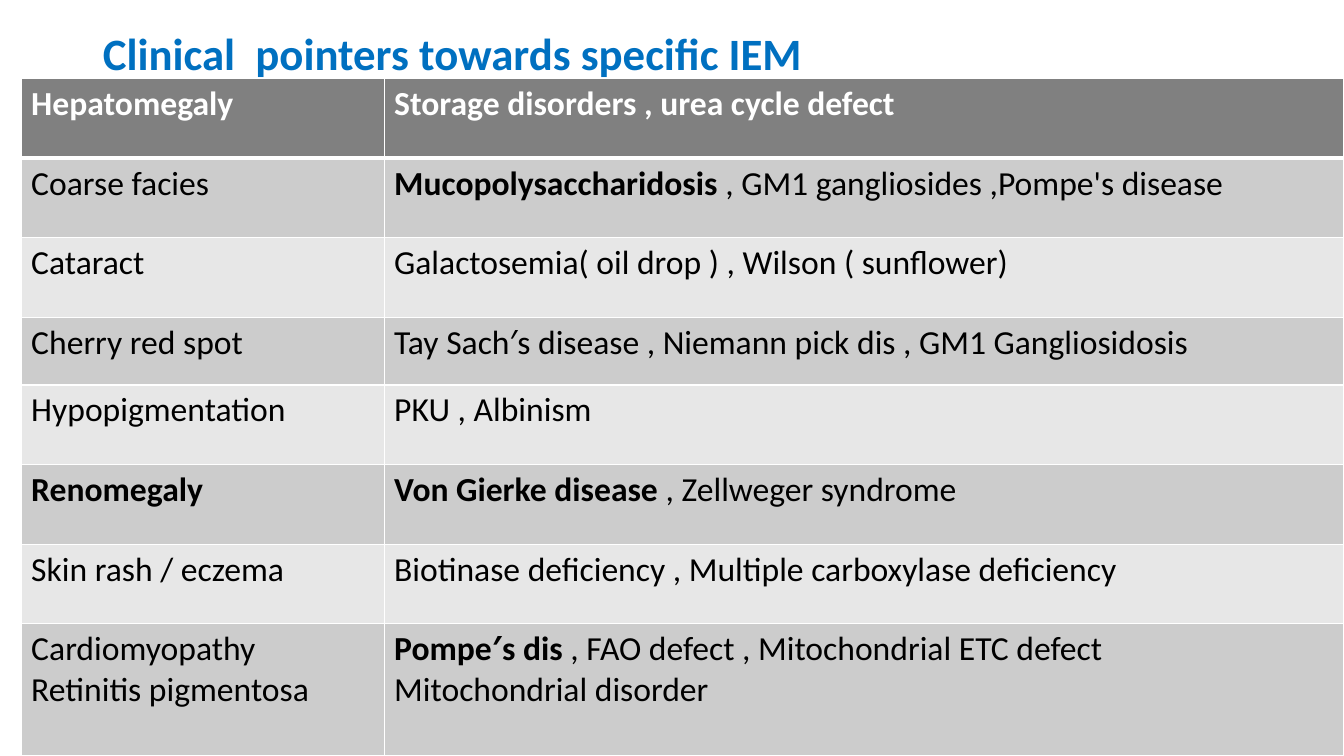
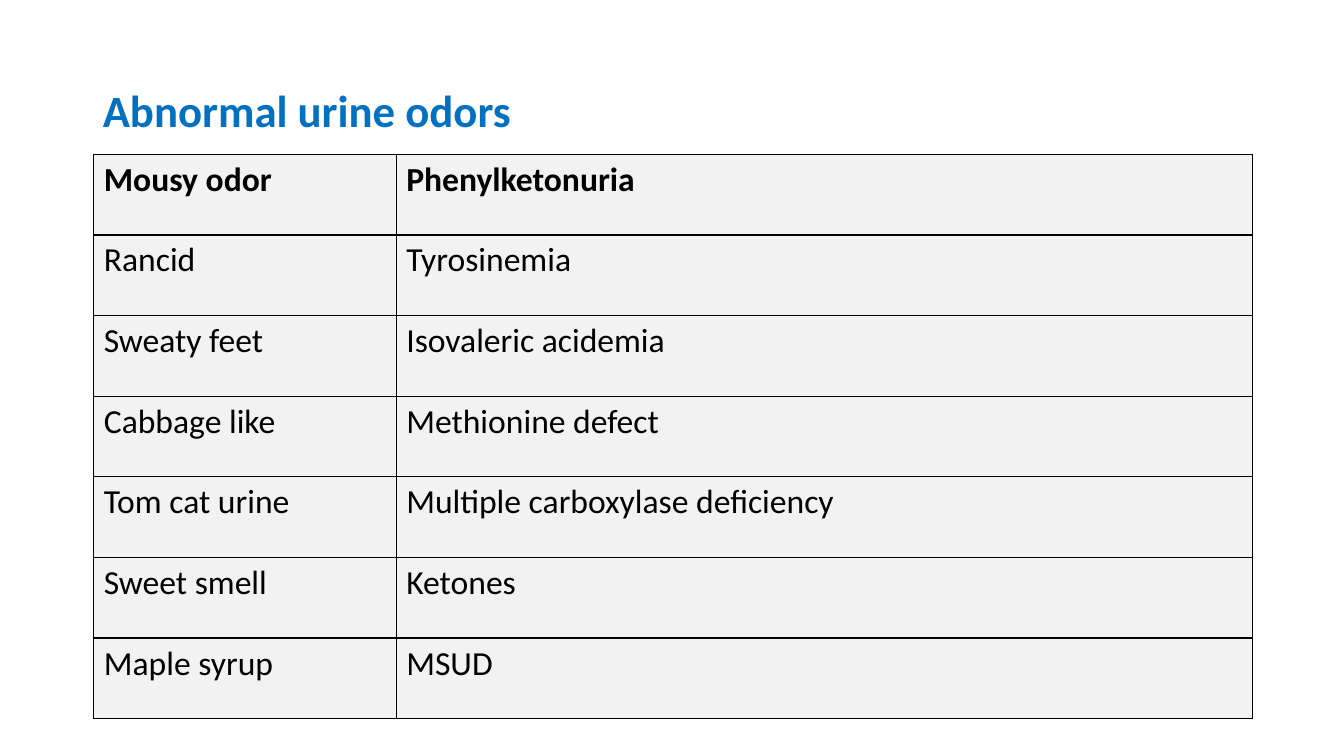
from dataclasses import dataclass

from lxml.etree import SubElement
from pptx import Presentation
from pptx.dml.color import RGBColor
from pptx.enum.text import MSO_ANCHOR, PP_ALIGN
from pptx.oxml.ns import qn
from pptx.util import Emu, Pt


@dataclass(frozen=True)
class Theme:
    """Colours, font and type sizes shared by the slides."""
    font: str = "Calibri"
    title_size: int = 32
    body_size: int = 24
    blue: str = "0070C0"
    black: str = "000000"
    white: str = "FFFFFF"
    header_gray: str = "808080"
    dark_band: str = "CCCCCC"
    light_band: str = "E7E7E7"
    pale: str = "F2F2F2"


@dataclass(frozen=True)
class TableStyle:
    """Fills and rules of one table."""
    header_fill: str
    header_ink: str
    bands: tuple
    rule: str
    header_rule: float


THEME = Theme()
BANDED = TableStyle(THEME.header_gray, THEME.white,
                    (THEME.dark_band, THEME.light_band), THEME.white, 3)
GRID = TableStyle(THEME.pale, THEME.black, (THEME.pale,), THEME.black, 1.5)

POINTERS = [
    ("*Hepatomegaly*", "*Storage disorders , urea cycle defect*"),
    ("Coarse facies", "*Mucopolysaccharidosis* , GM1 gangliosides ,Pompe's disease"),
    ("Cataract", "Galactosemia( oil drop ) , Wilson ( sunflower)"),
    ("Cherry red spot", "Tay Sach′s disease , Niemann pick dis , GM1 Gangliosidosis"),
    ("Hypopigmentation", "PKU , Albinism"),
    ("*Renomegaly*", "*Von Gierke disease *, Zellweger syndrome"),
    ("Skin rash / eczema", "Biotinase deficiency , Multiple carboxylase deficiency"),
    ("Cardiomyopathy\nRetinitis pigmentosa",
     "*Pompe′s dis *, FAO defect , Mitochondrial ETC defect\nMitochondrial disorder"),
]
ODORS = [
    ("*Mousy odor*", "*Phenylketonuria*"),
    ("Rancid", "Tyrosinemia"),
    ("Sweaty feet", "Isovaleric acidemia"),
    ("Cabbage like", "Methionine defect"),
    ("Tom cat urine", "Multiple carboxylase deficiency"),
    ("Sweet smell", "Ketones"),
    ("Maple syrup", "MSUD"),
]


def px(n):
    """Turn px, 100 to the inch, into EMU."""
    return Emu(n * 9144)


def write(tf, text, *, size, color, spacing=None):
    """Fill a text frame line by line; words between asterisks are bold."""
    for i, line in enumerate(text.split("\n")):
        p = tf.paragraphs[0] if i == 0 else tf.add_paragraph()
        p.alignment = PP_ALIGN.LEFT
        p.line_spacing = spacing
        for j, part in enumerate(line.split("*")):
            if part:
                r = p.add_run()
                r.text = part
                r.font.name = THEME.font
                r.font.size = Pt(size)
                r.font.bold = j % 2 == 1
                r.font.color.rgb = RGBColor.from_string(color)


def add_rules(cell, color, top, bottom):
    """Draw the four borders of a cell, before its fill is set."""
    tc_pr = cell._tc.get_or_add_tcPr()
    for side, width in (("L", 1), ("R", 1), ("T", top), ("B", bottom)):
        ln = SubElement(tc_pr, qn(f"a:ln{side}"), w=str(Pt(width)))
        SubElement(SubElement(ln, qn("a:solidFill")), qn("a:srgbClr"), val=color)


def add_title(s, text, box):
    """Place and format the title placeholder."""
    sp = s.shapes.title
    sp.left, sp.top, sp.width, sp.height = map(px, box)
    tf = sp.text_frame
    tf.word_wrap = True
    tf.vertical_anchor = MSO_ANCHOR.MIDDLE
    write(tf, f"*{text}*", size=THEME.title_size, color=THEME.blue, spacing=0.9)


def add_grid(s, rows, origin, widths, heights, style):
    """Add a table with a header row and repeating row fills."""
    size = sum(widths), sum(heights)
    table = s.shapes.add_table(len(rows), len(widths), *map(px, origin + size)).table
    table.horz_banding = False
    for col, width in zip(table.columns, widths):
        col.width = px(width)
    for i, (row, height) in enumerate(zip(rows, heights)):
        table.rows[i].height = px(height)
        fill = style.bands[(i - 1) % len(style.bands)] if i else style.header_fill
        ink = THEME.black if i else style.header_ink
        for j, text in enumerate(row):
            cell = table.cell(i, j)
            add_rules(cell, style.rule, top=style.header_rule if i == 1 else 1,
                      bottom=1 if i else style.header_rule)
            cell.fill.solid()
            cell.fill.fore_color.rgb = RGBColor.from_string(fill)
            write(cell.text_frame, text, size=THEME.body_size, color=ink)


def add_table_slide(prs, title, title_box, rows, origin, widths, heights, style):
    """Add a title-only slide carrying one table."""
    s = prs.slides.add_slide(prs.slide_layouts[5])
    add_title(s, title, title_box)
    add_grid(s, rows, origin, widths, heights, style)


def main():
    """Build the two slides and save them."""
    prs = Presentation()
    prs.slide_width, prs.slide_height = px(1333), px(750)
    add_table_slide(prs, "Clinical  pointers towards specific IEM", (92, 0, 1150, 112),
                    POINTERS, (21, 78), (360, 952),
                    [79] * 3 + [67] + [79] * 3 + [131], BANDED)
    add_table_slide(prs, "Abnormal urine odors", (92, 40, 1150, 145),
                    ODORS, (93, 153), (300, 849), [80] * len(ODORS), GRID)
    prs.save("out.pptx")


if __name__ == "__main__":
    main()
